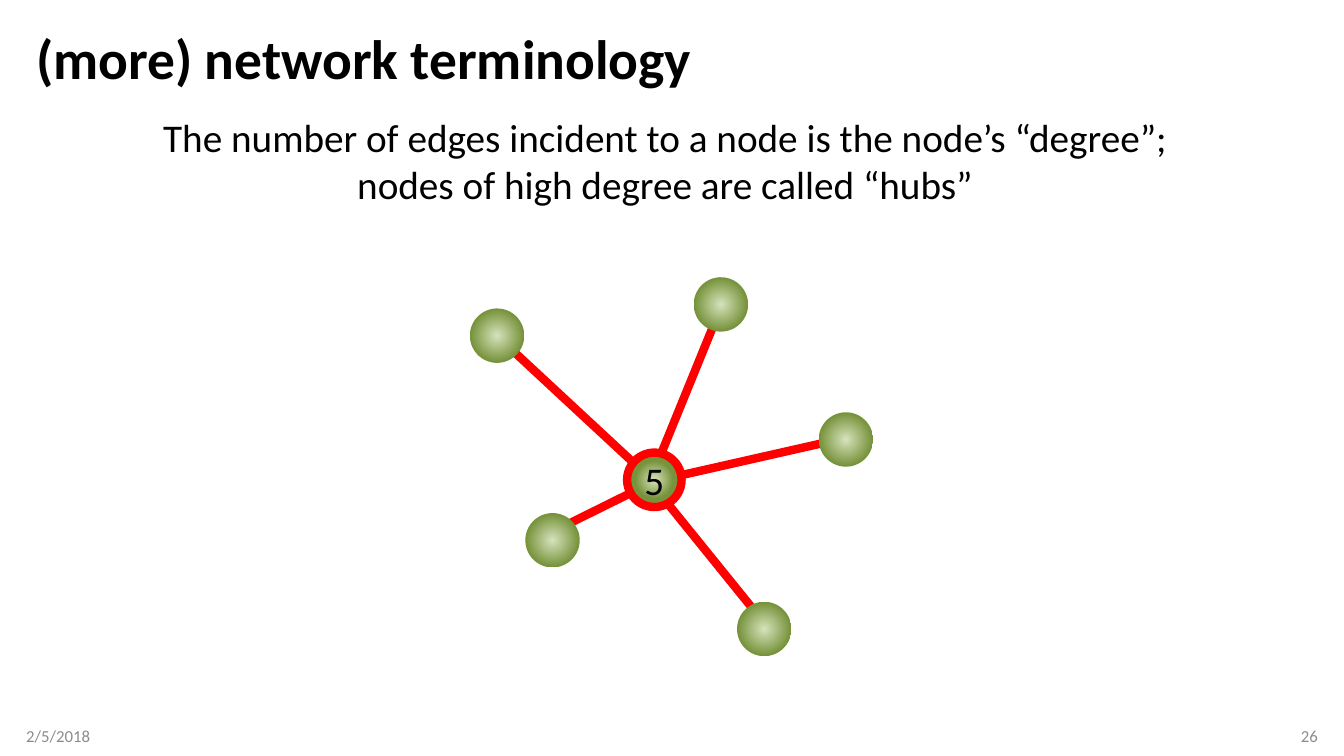
import lxml.etree
import pptx
import pptx.dml.color
import pptx.enum.shapes
import pptx.enum.text
import pptx.oxml.ns
import pptx.util

Inches = pptx.util.Inches
Pt = pptx.util.Pt
qn = pptx.oxml.ns.qn
ALIGN = pptx.enum.text.PP_ALIGN
ANCHOR = pptx.enum.text.MSO_ANCHOR
NODE_SIZE = 0.54
EDGE_COLOR = "FF0000"


def color(hex_string):
    return pptx.dml.color.RGBColor.from_string(hex_string)


def write_lines(frame, lines, size, text_color, alignment, bold=False):
    for index, line in enumerate(lines):
        paragraph = frame.add_paragraph() if index else frame.paragraphs[0]
        paragraph.text = line
        paragraph.alignment = alignment
        paragraph.font.name = "Calibri"
        paragraph.font.size = Pt(size)
        paragraph.font.bold = bold
        paragraph.font.color.rgb = color(text_color)


presentation = pptx.Presentation()
presentation.slide_width = Inches(13.33)
presentation.slide_height = Inches(7.5)
slide = presentation.slides.add_slide(presentation.slide_layouts[6])

title = slide.shapes.add_textbox(Inches(0.26), Inches(0.25), Inches(12.81), Inches(0.72))
title.text_frame.word_wrap = True
title.text_frame.vertical_anchor = ANCHOR.MIDDLE
write_lines(title.text_frame, ["(more) network terminology"], 39.6, "000000", ALIGN.LEFT, True)
title.text_frame.paragraphs[0].line_spacing = 0.9

footers = [
    (0.26, "2/5/2018", ALIGN.LEFT, 0, 0.1),
    (10.07, "26", ALIGN.RIGHT, 0.1, 0),
]
for left, text, alignment, margin_left, margin_right in footers:
    footer = slide.shapes.add_textbox(Inches(left), Inches(7.1), Inches(3), Inches(0.4))
    frame = footer.text_frame
    frame.word_wrap = True
    frame.vertical_anchor = ANCHOR.MIDDLE
    frame.margin_left = Inches(margin_left)
    frame.margin_right = Inches(margin_right)
    write_lines(frame, [text], 12, "8C8C8C", alignment)

definition = slide.shapes.add_textbox(Inches(1.03), Inches(1.07), Inches(11.13), Inches(1.51))
definition.text_frame.word_wrap = True
definition_lines = [
    "The number of edges incident to a node is the node’s “degree”;",
    "nodes of high degree are called “hubs”",
]
write_lines(definition.text_frame, definition_lines, 28, "000000", ALIGN.CENTER)

network = slide.shapes.add_group_shape()
edges = [
    (5.41, 5.31, 6.48, 4.78),
    (6.42, 4.84, 7.19, 2.95),
    (4.84, 3.25, 6.53, 4.82),
    (6.44, 4.77, 7.58, 6.18),
    (6.51, 4.77, 8.41, 4.34),
]
for edge in edges:
    connector = network.shapes.add_connector(
        pptx.enum.shapes.MSO_CONNECTOR.STRAIGHT, *[Inches(value) for value in edge]
    )
    connector.line.color.rgb = color(EDGE_COLOR)
    connector.line.width = Pt(6)
    lxml.etree.SubElement(connector._element.spPr, qn("a:effectLst"))

nodes = [
    (4.66, 3.06, ""),
    (5.21, 5.09, ""),
    (7.31, 5.97, ""),
    (6.88, 2.75, ""),
    (8.12, 4.09, ""),
    (6.22, 4.49, "5"),
]
for left, top, degree in nodes:
    node = network.shapes.add_shape(
        pptx.enum.shapes.MSO_SHAPE.OVAL,
        Inches(left), Inches(top), Inches(NODE_SIZE), Inches(NODE_SIZE),
    )
    node.shadow.inherit = False
    node.fill.gradient()
    for stop, position, stop_color in zip(node.fill.gradient_stops, (0, 0.5), ("D7E4BD", "77933C")):
        stop.position = position
        stop.color.rgb = color(stop_color)
    gradient = node._element.spPr.find(qn("a:gradFill"))
    linear = gradient.find(qn("a:lin"))
    radial = lxml.etree.Element(qn("a:path"), {"path": "circle"})
    sides = {side: "50000" for side in "ltrb"}
    lxml.etree.SubElement(radial, qn("a:fillToRect"), sides)
    gradient.replace(linear, radial)
    if degree:
        node.line.color.rgb = color(EDGE_COLOR)
        node.line.width = Pt(6)
        node.text_frame.word_wrap = False
        node.text_frame.vertical_anchor = ANCHOR.MIDDLE
        write_lines(node.text_frame, [degree], 28, "000000", ALIGN.CENTER)
    else:
        node.line.fill.background()
        node.rotation = 327.4

presentation.save("out.pptx")
